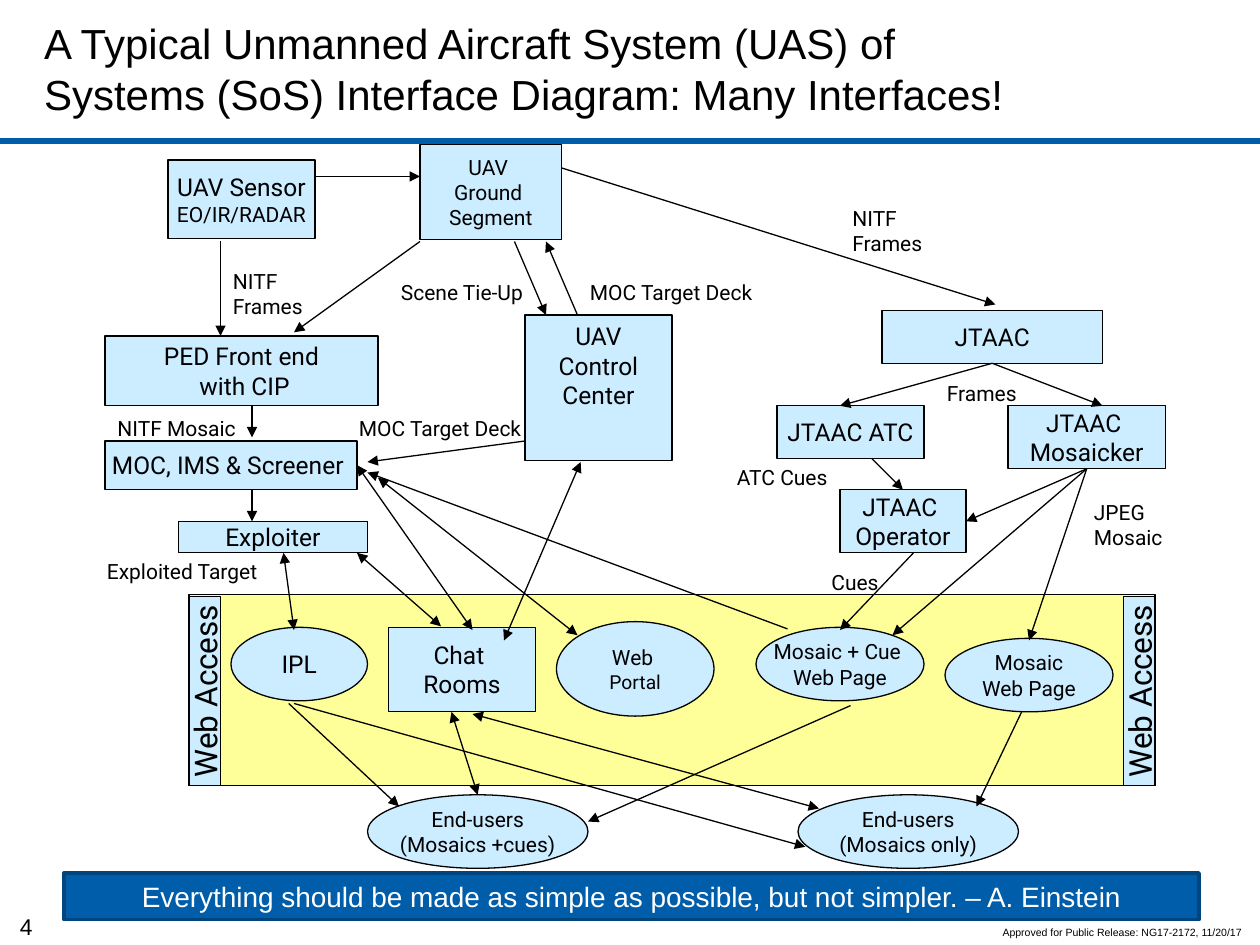
from pptx import Presentation
from pptx.dml.color import RGBColor
from pptx.enum.shapes import MSO_CONNECTOR, MSO_SHAPE
from pptx.enum.text import MSO_ANCHOR, MSO_AUTO_SIZE, PP_ALIGN
from pptx.oxml.ns import qn
from pptx.util import Inches, Pt
from lxml import etree

BOX, OVAL = MSO_SHAPE.RECTANGLE, MSO_SHAPE.OVAL
LEFT, MID = PP_ALIGN.LEFT, PP_ALIGN.CENTER
BLACK = RGBColor(0x00, 0x00, 0x00)
WHITE = RGBColor(0xFF, 0xFF, 0xFF)
SKY = RGBColor(0xCC, 0xEC, 0xFF)
SAND = RGBColor(0xFF, 0xFF, 0x99)
BLUE = RGBColor(0x00, 0x5D, 0xAA)
NAVY = RGBColor(0x00, 0x45, 0x7E)

deck = Presentation()
deck.slide_width, deck.slide_height = Inches(10), Inches(7.5)
slide = deck.slides.add_slide(deck.slide_layouts[5])
shapes = slide.shapes
# Grid of 120 columns by 90 rows
UNIT = deck.slide_width / 120


def grid(*cells):
    return [round(cell * UNIT) for cell in cells]


def write(shape, text, size, align=MID, font="Roboto", color=BLACK, wrap=False):
    frame = shape.text_frame
    frame.text = text
    frame.word_wrap = wrap
    for para in frame.paragraphs:
        para.alignment = align
        for run in para.runs:
            run.font.size = Pt(size)
            run.font.name = font
            run.font.color.rgb = color


title = shapes.title
title.left, title.top, title.width, title.height = grid(3, 1, 95, 11)
write(title, "A Typical Unmanned Aircraft System (UAS) of Systems (SoS) "
      "Interface Diagram: Many Interfaces!", 24, LEFT, "Arial", wrap=True)
title.text_frame.auto_size = MSO_AUTO_SIZE.NONE
title.text_frame.vertical_anchor = MSO_ANCHOR.MIDDLE

rule = shapes.add_connector(MSO_CONNECTOR.STRAIGHT, *grid(0, 13.45, 120, 13.45))
rule.line.color.rgb, rule.line.width = BLUE, Pt(3.75)
etree.SubElement(rule._element.spPr, qn("a:effectLst"))

# name: kind, column, row, columns, rows, text, size
nodes = {
    "web": (BOX, 18, 56.65, 92, 18.2, "", 12),
    "sensor": (BOX, 16, 15.25, 14, 7.5, "UAV Sensor\nEO/IR/RADAR", 14),
    "ground": (BOX, 40, 13.75, 13.5, 9.1, "UAV \nGround \nSegment", 12),
    "jtaac": (BOX, 84, 29.6, 21, 5, "JTAAC", 14),
    "ped": (BOX, 10, 32, 26, 6.6, "PED Front end\n with CIP", 14),
    "moc": (BOX, 10, 42, 24, 4.6, "MOC, IMS & Screener ", 14),
    "exploiter": (BOX, 17, 49.65, 18, 3, "Exploiter", 14),
    "control": (BOX, 50, 30, 14, 13.9, "UAV Control Center", 14),
    "atc": (BOX, 74, 38.65, 14, 5, "JTAAC ATC", 14),
    "mosaicker": (BOX, 96, 38.65, 15, 6, "JTAAC \nMosaicker", 14),
    "operator": (BOX, 80, 46.65, 12, 6, "JTAAC \nOperator", 14),
    "ipl": (OVAL, 22, 59.75, 13, 7, "IPL", 14),
    "chat": (BOX, 37, 59.75, 14, 8, "Chat \nRooms", 14),
    "portal": (OVAL, 53, 59.2, 15, 9, "Web \nPortal", 12),
    "cue": (OVAL, 72, 59.75, 16, 7, "Mosaic + Cue \nWeb Page", 12),
    "mosaic": (OVAL, 90, 60.8, 16, 7, "Mosaic\nWeb Page", 12),
    "west": (BOX, 10.5, 64.3, 18, 3, "Web Access", 18),
    "east": (BOX, 99.5, 64.3, 18, 3, "Web Access", 18),
    "both": (OVAL, 35, 75.7, 21, 7, "End-users\n(Mosaics +cues)", 12),
    "only": (OVAL, 76, 75.7, 21, 7, "End-users\n(Mosaics only)", 12),
    "quote": (BOX, 6.1, 83.15, 108.1, 4.45, "Everything should be made as "
              "simple as possible, but not simpler. – A. Einstein", 16),
}
made = {}
for name, (kind, x, y, w, h, text, size) in nodes.items():
    node = made[name] = shapes.add_shape(kind, *grid(x, y, w, h))
    node.shadow.inherit = False
    node.fill.solid()
    node.fill.fore_color.rgb = SKY
    node.line.color.rgb, node.line.width = BLACK, Pt(0.75)
    if text:
        write(node, text, size)

made["web"].fill.fore_color.rgb = SAND
for side in ("west", "east"):
    made[side].rotation = 270
made["sensor"].text_frame.paragraphs[1].runs[0].font.size = Pt(12)
made["portal"].text_frame.paragraphs[1].runs[0].font.size = Pt(11)
made["control"].text_frame.word_wrap = True
made["control"].text_frame.vertical_anchor = MSO_ANCHOR.TOP
quote = made["quote"]
quote.fill.fore_color.rgb = BLUE
quote.line.color.rgb, quote.line.width = NAVY, Pt(2)
write(quote, quote.text_frame.text, 16, font="Arial", color=WHITE, wrap=True)

# Ends are grid points, or a node with its connection site
one_way = [
    ((30, 16.8), (40, 16.8)), ((21, 23), (21, 32)),
    ((40, 23), (28, 31.65)), ((53.5, 16), (94.8, 29)),
    ((49, 23), (52, 30)), ((55, 30), (52, 23)),
    ((24, 38.65), (24, 41.65)), ((24, 46.65), (24, 49.65)),
    ((50, 42), (35, 44)), ((75, 59.9), (35, 45)),
    (("jtaac", 2), (80, 38.65)), (("jtaac", 2), (105, 38.65)),
    ((83, 43.65), (86, 46.65)), ((87, 52.65), (80, 60)),
    (("mosaicker", 2), (85, 60.5)), (("mosaicker", 2), ("operator", 3)),
    (("mosaicker", 2), (98, 61)), ((97.3, 67.8), (93, 76.8)),
    ((81, 67.2), (56, 78.25)), ((28, 67), (76.7, 80.65)),
    ((27.5, 67), (38, 76.8)),
]
two_way = [
    ((27, 52.65), (28, 60)), ((55.3, 44), (48, 61)),
    (("moc", 3), (45, 60)), ((34, 52.65), (42, 59.65)),
    ((36, 45.5), (55, 60.5)), ((45, 68), (78, 77)),
    ((43, 67.8), ("both", 0)),
]
for pair in one_way + two_way:
    points = [(0, 0) if isinstance(end[0], str) else end for end in pair]
    link = shapes.add_connector(MSO_CONNECTOR.STRAIGHT, *grid(*points[0], *points[1]))
    for end, join in zip(pair, (link.begin_connect, link.end_connect)):
        if isinstance(end[0], str):
            join(made[end[0]], end[1])
    link.line.color.rgb, link.line.width = BLACK, Pt(0.75)
    tips = ("a:headEnd", "a:tailEnd") if pair in two_way else ("a:tailEnd",)
    for tip in tips:
        etree.SubElement(link.line._get_or_add_ln(), qn(tip), type="triangle")
    etree.SubElement(link._element.spPr, qn("a:effectLst"))

labels = [
    (21, 25, 10, "NITF Frames"), (80, 19, 10, "NITF Frames"),
    (10, 39, 15, "NITF Mosaic"), (9, 52.65, 22, "Exploited Target"),
    (103, 47, 10, "JPEG Mosaic"), (78, 53.65, 8, "Cues"),
    (69, 43.65, 12, "ATC Cues"), (89, 35.65, 13, "Frames"),
    (55, 26, 18.5, "MOC Target Deck"), (33, 39, 18.5, "MOC Target Deck"),
    (37, 26, 14.65, "Scene Tie-Up"),
]
for x, y, w, text in labels:
    label = shapes.add_textbox(*grid(x, y, w, 3.6))
    write(label, text, 12, LEFT, wrap=True)

page = shapes.add_textbox(*grid(0.6, 86.3, 3.8, 4))
write(page, "4", 13, font="Arial")
note = shapes.add_textbox(*grid(94.3, 87.6, 25.6, 2.4))
write(note, "Approved for Public Release: NG17-2172, 11/20/17", 6, LEFT, "Arial")

deck.save("out.pptx")
